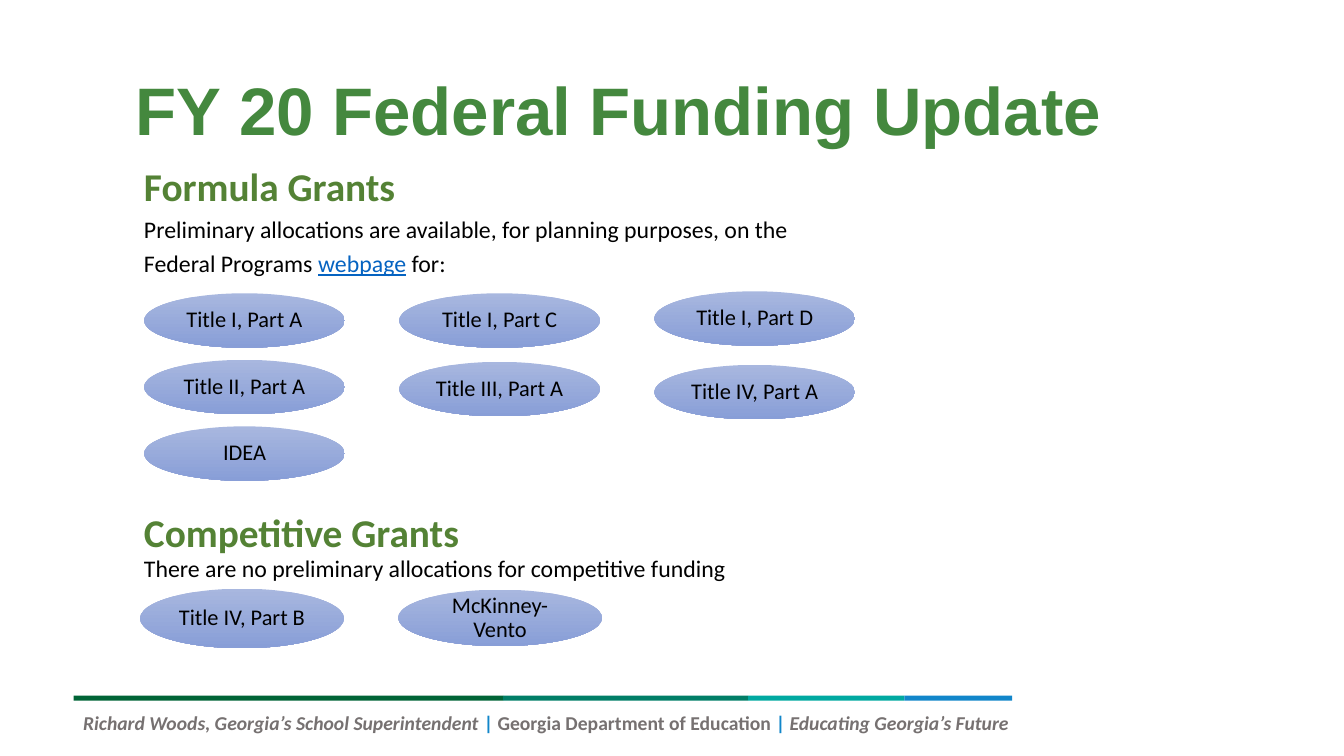
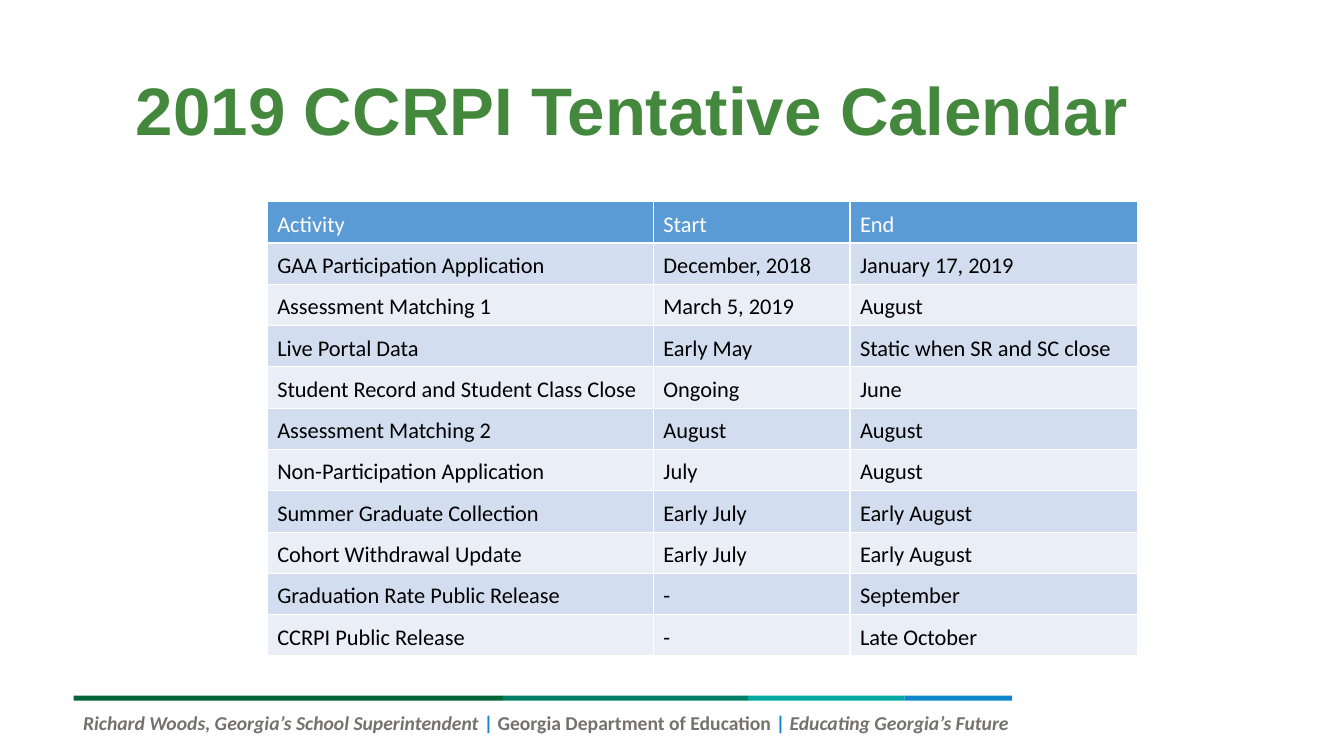
"""Build the federal funding and CCRPI calendar slides."""
import itertools

import pptx
import pptx.dml.color
import pptx.enum.dml
import pptx.enum.shapes
import pptx.enum.text
import pptx.oxml
import pptx.oxml.ns
import pptx.util

Inches = pptx.util.Inches
Pt = pptx.util.Pt
RGBColor = pptx.dml.color.RGBColor
Align = pptx.enum.text.PP_ALIGN
Anchor = pptx.enum.text.MSO_ANCHOR
Preset = pptx.enum.shapes.MSO_SHAPE

BLACK = RGBColor(0x00, 0x00, 0x00)
WHITE = RGBColor(0xFF, 0xFF, 0xFF)
TITLE_GREEN = RGBColor(0x44, 0x88, 0x3E)
HEADING_GREEN = RGBColor(0x54, 0x82, 0x35)
LINK_BLUE = RGBColor(0x05, 0x63, 0xC1)
FOOTER_GRAY = RGBColor(0x76, 0x71, 0x71)
BAND_GREEN = RGBColor(0x00, 0x64, 0x36)
BAND_JADE = RGBColor(0x00, 0x7E, 0x67)
BAND_TEAL = RGBColor(0x00, 0xA9, 0xA1)
BAND_BLUE = RGBColor(0x11, 0x86, 0xCA)
GRANT_LIGHT = RGBColor(0xA8, 0xB7, 0xDF)
GRANT_DARK = RGBColor(0x88, 0x9E, 0xD7)
HEADER_BLUE = RGBColor(0x5B, 0x9B, 0xD5)
ROW_FILLS = (RGBColor(0xD2, 0xDE, 0xEF), RGBColor(0xEA, 0xEF, 0xF7))

TITLE = {"name": "Arial", "size": Pt(48), "bold": True, "color": TITLE_GREEN}
HEADING = {"name": "Calibri", "size": Pt(28.1), "bold": True, "color": HEADING_GREEN}
BODY = {"name": "Calibri", "size": Pt(17), "color": BLACK}
LINK = BODY | {"underline": True, "color": LINK_BLUE}
LABEL = {"name": "Calibri", "size": Pt(16), "color": BLACK}
HEADER = LABEL | {"color": WHITE}
FOOTER = {"name": "Calibri", "size": Pt(14), "bold": True, "color": FOOTER_GRAY}
FOOTER_ITALIC = FOOTER | {"italic": True}
FOOTER_BAR = FOOTER | {"color": BAND_BLUE}

BAND_LEFT, BAND_TOP, BAND_HEIGHT = 0.73, 6.9, 0.05
BAND_PARTS = ((4.26, BAND_GREEN), (2.43, BAND_JADE), (1.55, BAND_TEAL), (1.07, BAND_BLUE))
FOOTER_RUNS = (
    ("Richard Woods, Georgia’s School Superintendent ", FOOTER_ITALIC),
    ("|", FOOTER_BAR),
    (" Georgia Department of Education ", FOOTER),
    ("| ", FOOTER_BAR),
    ("Educating Georgia’s Future ", FOOTER_ITALIC),
)

GRANT_LEFT, GRANT_PITCH, GRANT_SIZE = 1.43, 2.53, (1.99, 0.54)
FORMULA_COLUMNS = (
    (2.91, 0.66, ("Title I, Part A", "Title II, Part A", "IDEA")),
    (2.91, 0.68, ("Title I, Part C", "Title III, Part A")),
    (2.89, 0.73, ("Title I, Part D", "Title IV, Part A")),
)
COMPETITIVE_LEFT, COMPETITIVE_PITCH, COMPETITIVE_WIDTH = 1.39, 2.56, 2.02
COMPETITIVE_GRANTS = ((5.84, 0.59, "Title IV, Part B"), (5.85, 0.56, "McKinney-Vento"))

CALENDAR_COLUMNS, CALENDAR_ROW = (3.83, 1.95, 2.85), 0.41
CALENDAR = (
    ("Activity", "Start", "End"),
    ("GAA Participation Application", "December, 2018", "January 17, 2019"),
    ("Assessment Matching 1", "March 5, 2019", "August"),
    ("Live Portal Data", "Early May", "Static when SR and SC close"),
    ("Student Record and Student Class Close", "Ongoing", "June"),
    ("Assessment Matching 2", "August", "August"),
    ("Non-Participation Application", "July", "August"),
    ("Summer Graduate Collection", "Early July", "Early August"),
    ("Cohort Withdrawal Update", "Early July", "Early August"),
    ("Graduation Rate Public Release", "-", "September"),
    ("CCRPI Public Release", "-", "Late October"),
)


def write(paragraph, runs, **layout):
    for attribute, value in layout.items():
        setattr(paragraph, attribute, value)
    for words, formats in runs:
        run = paragraph.add_run()
        run.text = words
        for attribute, value in formats.items():
            if attribute == "color":
                run.font.color.rgb = value
            else:
                setattr(run.font, attribute, value)


def add_text(slide, box, paragraphs, anchor=Anchor.TOP, gap=0, **layout):
    frame = slide.shapes.add_textbox(*map(Inches, box)).text_frame
    frame.word_wrap = True
    frame.vertical_anchor = anchor
    for index, runs in enumerate(paragraphs):
        paragraph = frame.add_paragraph() if index else frame.paragraphs[0]
        write(paragraph, runs, space_before=Pt(gap if index else 0), **layout)


def add_plain_shape(slide, preset, box):
    shape = slide.shapes.add_shape(preset, *map(Inches, box))
    shape.shadow.inherit = False
    shape.line.fill.background()
    return shape


def add_grant(slide, box, label):
    grant = add_plain_shape(slide, Preset.OVAL, box)
    grant.fill.gradient()
    grant.fill.gradient_angle = 270
    for stop, color, position in zip(grant.fill.gradient_stops, (GRANT_LIGHT, GRANT_DARK), (0, 1)):
        stop.color.rgb = color
        stop.position = position
    frame = grant.text_frame
    frame.word_wrap = True
    frame.vertical_anchor = Anchor.MIDDLE
    for side in ("left", "top", "right", "bottom"):
        setattr(frame, f"margin_{side}", Inches(0.07))
    write(frame.paragraphs[0], [(label, LABEL)], alignment=Align.CENTER, line_spacing=0.9)


def add_page(deck, title):
    slide = deck.slides.add_slide(deck.slide_layouts[6])
    widths = [width for width, _ in BAND_PARTS]
    lefts = itertools.accumulate(widths, initial=BAND_LEFT)
    for left, (width, color) in zip(lefts, BAND_PARTS):
        band = add_plain_shape(slide, Preset.RECTANGLE, (left, BAND_TOP, width, BAND_HEIGHT))
        band.fill.solid()
        band.fill.fore_color.rgb = color
    add_text(slide, (0.55, 7, 9.6, 0.4), [FOOTER_RUNS], alignment=Align.RIGHT)
    add_text(slide, (1.25, 0.4, 11.16, 1.45), [[(title, TITLE)]],
             anchor=Anchor.MIDDLE, line_spacing=0.9)
    return slide


def add_borders(cell):
    properties = cell._tc.get_or_add_tcPr()
    for index, side in enumerate(("lnL", "lnR", "lnT", "lnB")):
        properties.insert(index, pptx.oxml.parse_xml(
            f'<a:{side} {pptx.oxml.ns.nsdecls("a")} w="12700"><a:solidFill>'
            f'<a:srgbClr val="{WHITE}"/></a:solidFill></a:{side}>'))


def add_calendar(slide, left, top):
    size = (sum(CALENDAR_COLUMNS), CALENDAR_ROW * len(CALENDAR))
    calendar = slide.shapes.add_table(
        len(CALENDAR), len(CALENDAR_COLUMNS), *map(Inches, (left, top, *size))).table
    calendar.first_row = calendar.horz_banding = False
    for column, width in zip(calendar.columns, CALENDAR_COLUMNS):
        column.width = Inches(width)
    for index, entries in enumerate(CALENDAR):
        calendar.rows[index].height = Inches(CALENDAR_ROW)
        for cell, entry in zip(calendar.rows[index].cells, entries):
            cell.fill.solid()
            cell.fill.fore_color.rgb = ROW_FILLS[(index - 1) % 2] if index else HEADER_BLUE
            add_borders(cell)
            write(cell.text_frame.paragraphs[0], [(entry, LABEL if index else HEADER)],
                  line_spacing=1.15)


def add_funding(deck):
    slide = add_page(deck, "FY 20 Federal Funding Update")
    add_text(slide, (1.33, 1.69, 9.07, 1.15), [
        [("Formula Grants", HEADING)],
        [("Preliminary allocations are available, for planning purposes, on the", BODY)],
        [("Federal Programs ", BODY), ("webpage", LINK), (" for:", BODY)],
    ], gap=10, line_spacing=0.7)
    for column, (top, pitch, labels) in enumerate(FORMULA_COLUMNS):
        for row, label in enumerate(labels):
            corner = (GRANT_LEFT + column * GRANT_PITCH, top + row * pitch)
            add_grant(slide, corner + GRANT_SIZE, label)
    add_text(slide, (1.33, 5.12, 9.07, 0.7), [
        [("Competitive Grants", HEADING)],
        [("There are no preliminary allocations for competitive funding", BODY)],
    ], gap=5, line_spacing=0.7)
    for column, (top, height, label) in enumerate(COMPETITIVE_GRANTS):
        left = COMPETITIVE_LEFT + column * COMPETITIVE_PITCH
        add_grant(slide, (left, top, COMPETITIVE_WIDTH, height), label)


def main():
    deck = pptx.Presentation()
    deck.slide_width, deck.slide_height = Inches(13.33), Inches(7.5)
    add_funding(deck)
    add_calendar(add_page(deck, "2019 CCRPI Tentative Calendar"), 2.65, 2)
    deck.save("out.pptx")


if __name__ == "__main__":
    main()
